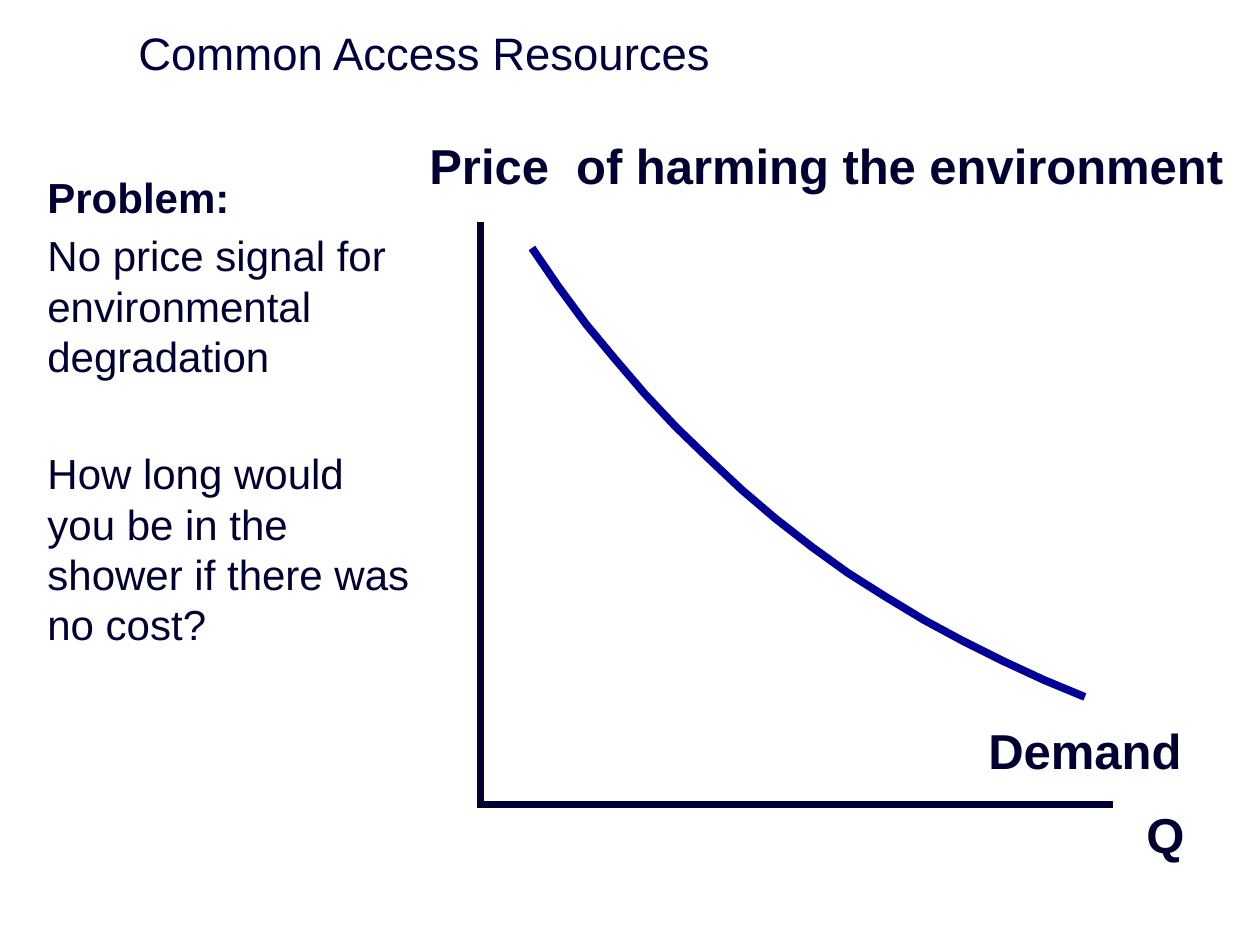
import pptx
import pptx.dml.color
import pptx.enum.shapes
import pptx.enum.text
import pptx.util
from pptx.oxml.ns import qn
import lxml.etree

PX = 914400 // 126
INK = "000032"
TITLE_INK = "00003E"
CURVE_BLUE = "000099"
MIDDLE = pptx.enum.text.MSO_ANCHOR.MIDDLE
TOP = pptx.enum.text.MSO_ANCHOR.TOP


def px(length):
    return pptx.util.Emu(length * PX)


def rgb(code):
    return pptx.dml.color.RGBColor.from_string(code)


def add_text(slide, box, paragraphs, size, color=INK, anchor=TOP, wrap=True):
    """Write (text, bold, space before in points) paragraphs in a box."""
    frame = slide.shapes.add_textbox(*map(px, box)).text_frame
    frame.word_wrap = wrap
    frame.vertical_anchor = anchor
    for index, (text, bold, gap) in enumerate(paragraphs):
        paragraph = frame.paragraphs[0] if index == 0 else frame.add_paragraph()
        paragraph.text = text
        paragraph.space_before = pptx.util.Pt(gap)
        paragraph.font.name = "Arial"
        paragraph.font.size = pptx.util.Pt(size)
        paragraph.font.bold = bold
        paragraph.font.color.rgb = rgb(color)


def add_axis(slide, start, end):
    axis = slide.shapes.add_connector(
        pptx.enum.shapes.MSO_CONNECTOR.STRAIGHT, *map(px, start + end))
    axis.line.color.rgb = rgb(INK)
    axis.line.width = pptx.util.Pt(4)
    lxml.etree.SubElement(axis._element.spPr, qn("a:effectLst"))


def add_demand_curve(slide, left, top):
    steps = [(0, 0), (26, 38), (54, 76), (83, 111), (113, 146), (144, 179),
             (176, 210), (210, 242), (244, 271), (280, 299), (316, 325),
             (354, 349), (392, 372), (431, 393), (471, 413), (512, 432),
             (553, 449)]
    points = [(left + x, top + y) for x, y in steps]
    builder = slide.shapes.build_freeform(*points[0], scale=PX)
    builder.add_line_segments(points[1:], close=False)
    curve = builder.convert_to_shape()
    curve.shadow.inherit = False
    curve.fill.background()
    curve.line.color.rgb = rgb(CURVE_BLUE)
    curve.line.width = pptx.util.Pt(4.5)


def add_demand_graph(slide, left, top, width, height):
    """Draw the axes in the given box, with the curve and labels around them."""
    bottom = top + height
    add_axis(slide, (left, top), (left, bottom))
    add_axis(slide, (left - 4, bottom), (left + width, bottom))
    add_demand_curve(slide, left + 51, top + 26)
    labels = [
        ("Price  of harming the environment", (left - 64, top - 93, 829, 72), MIDDLE),
        ("Demand", (left + 495, bottom - 91, 219, 72), TOP),
        ("Q", (left + 653, bottom - 7, 63, 72), TOP),
    ]
    for label, box, anchor in labels:
        add_text(slide, box, [(label, True, 0)], 28, anchor=anchor, wrap=False)


def add_problem(slide, box):
    add_text(slide, box, [
        ("Problem:", True, 0),
        ("No price signal for environmental degradation", False, 4.8),
        ("How long would you be in the shower if there was no cost?", False, 38),
    ], 24)


def main():
    deck = pptx.Presentation()
    deck.slide_width, deck.slide_height = px(1260), px(945)
    slide = deck.slides.add_slide(deck.slide_layouts[6])
    add_text(slide, (126, 20, 1134, 64), [("Common Access Resources", False, 0)],
             26, TITLE_INK, MIDDLE)
    add_problem(slide, (35, 165, 397, 624))
    add_demand_graph(slide, 481, 222, 632, 583)
    deck.save("out.pptx")


if __name__ == "__main__":
    main()
